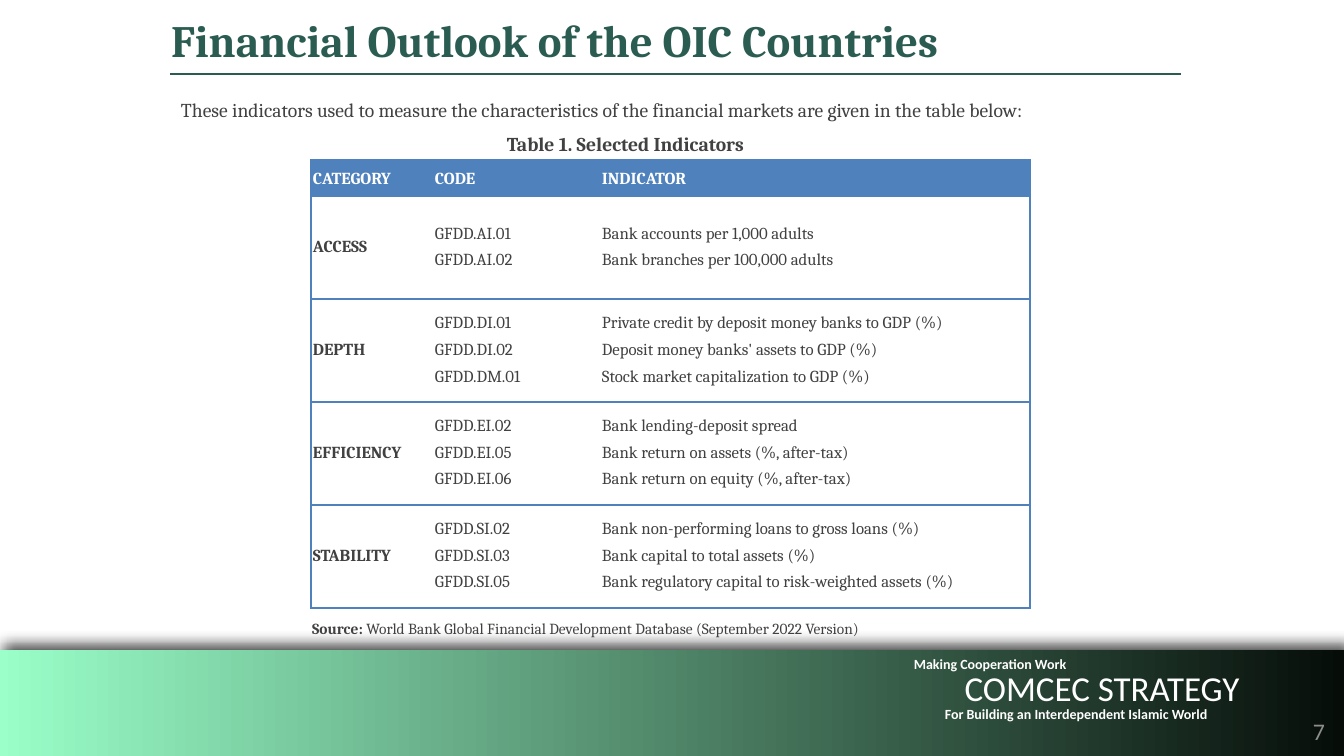
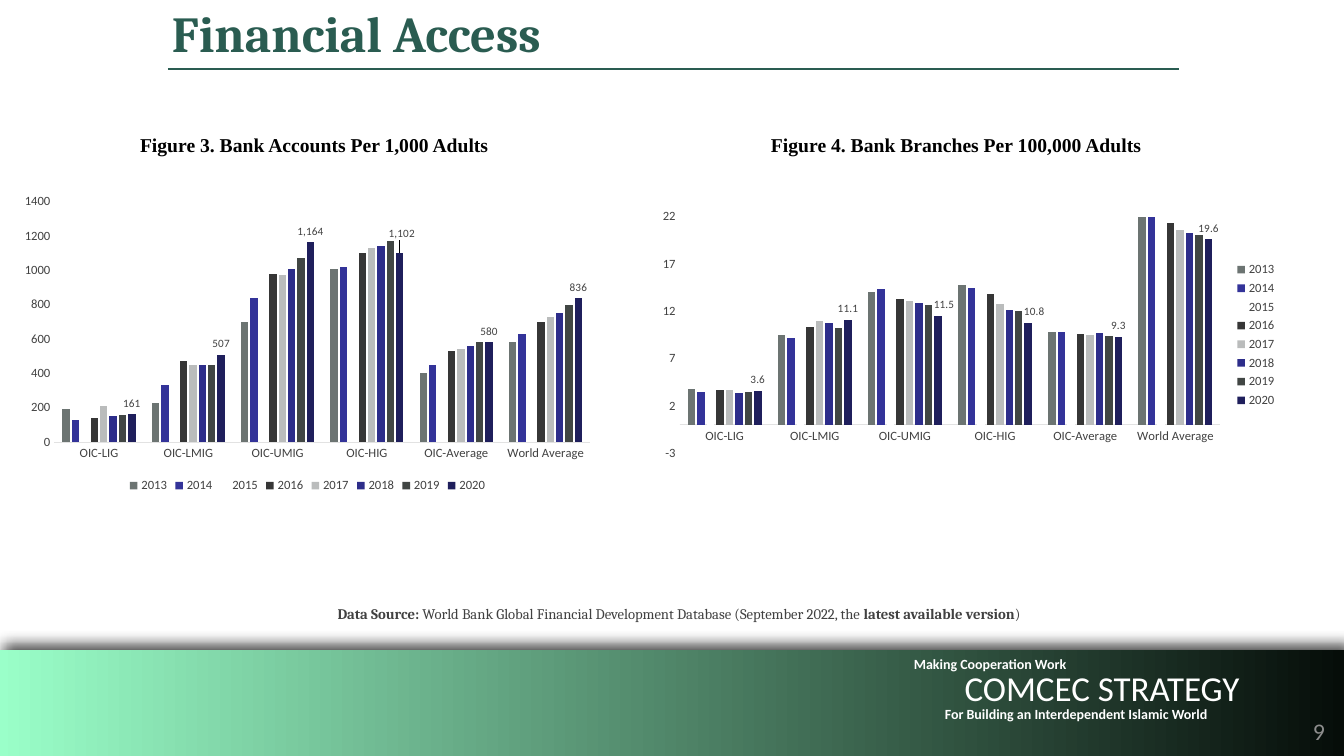
from copy import deepcopy

from lxml import etree
from pptx import Presentation
from pptx.chart.data import CategoryChartData
from pptx.dml.color import RGBColor
from pptx.enum.chart import XL_CHART_TYPE, XL_LABEL_POSITION, XL_LEGEND_POSITION, XL_TICK_MARK
from pptx.enum.shapes import MSO_CONNECTOR, MSO_SHAPE
from pptx.enum.text import MSO_ANCHOR, MSO_AUTO_SIZE, PP_ALIGN
from pptx.oxml import parse_xml
from pptx.oxml.ns import nsdecls, qn
from pptx.util import Emu, Pt

LEFT, CENTER, RIGHT, JUSTIFY = PP_ALIGN.LEFT, PP_ALIGN.CENTER, PP_ALIGN.RIGHT, PP_ALIGN.JUSTIFY
TOP, MIDDLE, BOTTOM = MSO_ANCHOR.TOP, MSO_ANCHOR.MIDDLE, MSO_ANCHOR.BOTTOM
STRAIGHT, RECTANGLE = MSO_CONNECTOR.STRAIGHT, MSO_SHAPE.RECTANGLE
GROW, FIXED = MSO_AUTO_SIZE.SHAPE_TO_FIT_TEXT, MSO_AUTO_SIZE.NONE
COLUMNS, NO_TICK = XL_CHART_TYPE.COLUMN_CLUSTERED, XL_TICK_MARK.NONE
LEGEND_BELOW, LEGEND_RIGHT = XL_LEGEND_POSITION.BOTTOM, XL_LEGEND_POSITION.RIGHT
ABOVE_BAR = XL_LABEL_POSITION.OUTSIDE_END

EMU_PER_PX = 12192000 / 1344
GREEN, INK, BLUE, WHITE, BLACK = "2A5C51", "414141", "4F81BD", "FFFFFF", "000000"
PALE_GREEN, NIGHT_GREEN, NUMBER_GRAY, AXIS_GRAY = "9AFFC9", "060D09", "8D8D8D", "E2E2E2"
SERIF, SANS, FIGURE_FONT = "Cambria", "Calibri", "Times New Roman"
NO_TABLE_STYLE = "{2D5ABB26-0587-4C30-8999-92F81FD0307C}"

BAND = (-3, 650, 1347, 106)
FOOTER = [
    ("For Building an Interdependent Islamic World", (876, 706, 400, 20), 10, True, TOP),
    ("COMCEC STRATEGY", (902, 661, 400, 48), 25, False, BOTTOM),
    ("Making Cooperation Work", (790, 655, 400, 36), 10, True, TOP),
]
NUMBER_BOX = (1126, 713, 206, 42)
RULE_WIDTH = 1011

OUTLOOK = {"title": "Financial Outlook of the OIC Countries", "box": (171, 13, 966, 54),
           "size": 32, "rule": (170, 74), "number": "7"}
ACCESS = {"title": "Financial Access", "box": (172, 2, 957, 61),
          "size": 36, "rule": (168, 69), "number": "9"}

INTRO = ("These indicators used to measure the characteristics of the financial markets "
         "are given in the table below:")
TABLE_CAPTION = "Table 1. Selected Indicators"
HEADER = ["CATEGORY", "CODE", "INDICATOR"]
INDICATORS = [
    ("ACCESS", [("GFDD.AI.01", "Bank accounts per 1,000 adults"),
                ("GFDD.AI.02", "Bank branches per 100,000 adults")]),
    ("DEPTH", [("GFDD.DI.01", "Private credit by deposit money banks to GDP (%)"),
               ("GFDD.DI.02", "Deposit money banks' assets to GDP (%)"),
               ("GFDD.DM.01", "Stock market capitalization to GDP (%)")]),
    ("EFFICIENCY", [("GFDD.EI.02", "Bank lending-deposit spread"),
                    ("GFDD.EI.05", "Bank return on assets (%, after-tax)"),
                    ("GFDD.EI.06", "Bank return on equity (%, after-tax)")]),
    ("STABILITY", [("GFDD.SI.02", "Bank non-performing loans to gross loans (%)"),
                   ("GFDD.SI.03", "Bank capital to total assets (%)"),
                   ("GFDD.SI.05", "Bank regulatory capital to risk-weighted assets (%)")]),
]
TABLE_LEFT, TABLE_TOP = 311, 160
COLUMN_WIDTHS = [122, 167, 430]
HEADER_HEIGHT, ROW_HEIGHT = 36, 103
TABLE_SOURCE = [("Source:", True),
                (" World Bank Global Financial Development Database (September 2022 Version)", False)]
DATA_SOURCE = [("Data Source:", True),
               (" World Bank Global Financial Development Database (September 2022, the ", False),
               ("latest available version", True), (")", False)]

GROUPS = ["OIC-LIG", "OIC-LMIG", "OIC-UMIG", "OIC-HIG", "OIC-Average", "World Average"]
YEAR_COLORS = {"2013": "6C7472", "2014": "333399", "2015": "FFFFFF", "2016": "363636",
               "2017": "BABCBC", "2018": "2D2D8A", "2019": "414644", "2020": "1F1F5C"}
FIGURES = [
    {"caption": "Figure 3. Bank Accounts Per 1,000 Adults", "caption_left": 130,
     "box": (13, 188, 589, 309), "legend": LEGEND_BELOW, "scale": (0, 1400, 200),
     "labels": "#,##0", "label_shifts": {"OIC-HIG": (2, -8)}, "values": [
         [190, 230, 700, 1010, 400, 580],
         [130, 330, 840, 1020, 450, 630],
         [130, 420, 890, 1050, 480, 680],
         [140, 470, 980, 1100, 530, 700],
         [210, 450, 970, 1130, 540, 730],
         [150, 450, 1010, 1140, 560, 750],
         [160, 450, 1070, 1170, 580, 800],
         [161, 507, 1164, 1102, 580, 836]]},
    {"caption": "Figure 4. Bank Branches Per 100,000 Adults", "caption_left": 761,
     "box": (650, 204, 637, 262), "legend": LEGEND_RIGHT, "scale": (-3, 22, 5),
     "labels": "0.0", "label_shifts": {"OIC-UMIG": (6, 0), "OIC-HIG": (6, 0)}, "values": [
         [3.8, 9.5, 14, 14.8, 9.8, 22.4],
         [3.5, 9.2, 14.4, 14.5, 9.8, 22.4],
         [3.7, 9.5, 13.3, 14, 9.5, 21.6],
         [3.7, 10.3, 13.3, 13.8, 9.6, 21.3],
         [3.7, 11, 13.1, 12.8, 9.5, 20.6],
         [3.4, 10.8, 12.9, 12.1, 9.7, 20.3],
         [3.5, 10.2, 12.7, 12, 9.4, 20],
         [3.6, 11.1, 11.5, 10.8, 9.3, 19.6]]},
]


def px(*lengths):
    return [Emu(round(length * EMU_PER_PX)) for length in lengths]


def rgb(code):
    return RGBColor.from_string(code)


def style_font(font, size, color=INK, name=SANS, bold=False):
    font.size, font.name, font.bold = Pt(size), name, bold
    font.color.rgb = rgb(color)


def write(frame, lines, size, color=INK, name=SERIF, bold=False, align=LEFT, spacing=None, after=None):
    for index, line in enumerate(lines):
        paragraph = frame.add_paragraph() if index else frame.paragraphs[0]
        paragraph.alignment = align
        if spacing:
            paragraph.line_spacing = spacing
        if after:
            paragraph.space_after = Pt(after)
        style_font(paragraph.font, size, color, name, bold)
        if isinstance(line, str):
            paragraph.add_run().text = line
            continue
        for text, is_bold in line:
            run = paragraph.add_run()
            run.text = text
            run.font.bold = is_bold


def set_insets(holder, side, end):
    holder.margin_left, holder.margin_right, holder.margin_top, holder.margin_bottom = px(side, side, end, end)


def add_text(slide, box, lines, size, anchor=TOP, insets=(10, 5), grow=True, **style):
    label = slide.shapes.add_textbox(*px(*box))
    frame = label.text_frame
    frame.word_wrap = True
    frame.auto_size = GROW if grow else FIXED
    frame.vertical_anchor = anchor
    set_insets(frame, *insets)
    write(frame, lines, size, **style)
    return label


def move_footer_to_layout(slide):
    layout_shapes = slide.slide_layout.shapes
    for unused in [item for item in layout_shapes if item.placeholder_format.idx]:
        layout_shapes.element.remove(unused.element)
    band = slide.shapes.add_shape(RECTANGLE, *px(*BAND))
    band.fill.gradient()
    band.fill.gradient_angle = 0
    for stop, color in zip(band.fill.gradient_stops, (PALE_GREEN, NIGHT_GREEN)):
        stop.color.rgb = rgb(color)
    band.line.fill.background()
    band.shadow.inherit = False
    band.element.find(".//" + qn("a:effectLst")).append(parse_xml(
        f'<a:outerShdw {nsdecls("a")} blurRad="127000" dist="76200" dir="19080000" rotWithShape="0">'
        f'<a:srgbClr val="{BLACK}"><a:alpha val="75000"/></a:srgbClr></a:outerShdw>'))
    slogans = [add_text(slide, box, [text], size, anchor=anchor, insets=(0, 0), grow=False,
                        color=WHITE, name=SANS, bold=bold, align=CENTER)
               for text, box, size, bold, anchor in FOOTER]
    for part in [band, *slogans]:
        layout_shapes.element.append(part.element)


def add_heading(slide, heading):
    title = slide.shapes.title
    title.left, title.top, title.width, title.height = px(*heading["box"])
    frame = title.text_frame
    frame.word_wrap = True
    frame.auto_size = GROW
    frame.vertical_anchor = TOP
    set_insets(frame, 0, 0)
    write(frame, [heading["title"]], heading["size"], color=GREEN, bold=True)
    left, top = heading["rule"]
    rule = slide.shapes.add_connector(STRAIGHT, *px(left, top, left + RULE_WIDTH, top))
    rule.line.color.rgb = rgb(GREEN)
    rule.line.width = Pt(2)
    etree.SubElement(rule.element.find(qn("p:spPr")), qn("a:effectLst"))
    add_text(slide, NUMBER_BOX, [heading["number"]], 17, insets=(7, 4), grow=False,
             color=NUMBER_GRAY, name=SANS, align=RIGHT)


def add_borders(cell, sides):
    properties = cell._tc.get_or_add_tcPr()
    for side in sides:
        properties.append(parse_xml(
            f'<a:ln{side} {nsdecls("a")} w="12700"><a:solidFill><a:srgbClr val="{BLUE}"/>'
            f'</a:solidFill></a:ln{side}>'))


def add_indicator_table(slide):
    heights = [HEADER_HEIGHT] + [ROW_HEIGHT] * len(INDICATORS)
    holder = slide.shapes.add_table(len(heights), len(HEADER), *px(
        TABLE_LEFT, TABLE_TOP, sum(COLUMN_WIDTHS), sum(heights)))
    holder.element.find(".//" + qn("a:tableStyleId")).text = NO_TABLE_STYLE
    table = holder.table
    table.horz_banding = False
    for column, width in zip(table.columns, px(*COLUMN_WIDTHS)):
        column.width = width
    for row, height in zip(table.rows, px(*heights)):
        row.height = height
    rows = [[[name] for name in HEADER]]
    for category, entries in INDICATORS:
        codes, descriptions = zip(*entries)
        rows.append([[category], codes, descriptions])
    outer_sides = [["L", "T", "B"], ["T", "B"], ["R", "T", "B"]]
    for row_index, row in enumerate(rows):
        for column_index, lines in enumerate(row):
            cell = table.cell(row_index, column_index)
            add_borders(cell, outer_sides[column_index])
            set_insets(cell, 2, 0)
            cell.vertical_anchor = MIDDLE
            if row_index == 0:
                cell.fill.solid()
                cell.fill.fore_color.rgb = rgb(BLUE)
                write(cell.text_frame, lines, 12, color=WHITE, bold=True, spacing=1.15, after=10)
            else:
                cell.fill.background()
                write(cell.text_frame, lines, 12, bold=column_index == 0, align=JUSTIFY,
                      spacing=Pt(13), after=6)


def shift_labels(labels, shifts, chart_width, chart_height):
    shared = [deepcopy(part) for part in labels if part.tag != qn("c:showLeaderLines")]
    for position, (group, (right, down)) in enumerate(shifts.items()):
        label = parse_xml(
            f'<c:dLbl {nsdecls("c")}><c:idx val="{GROUPS.index(group)}"/><c:layout><c:manualLayout>'
            f'<c:x val="{right / chart_width:.4f}"/><c:y val="{down / chart_height:.4f}"/>'
            f'</c:manualLayout></c:layout></c:dLbl>')
        label.extend(deepcopy(shared))
        labels.insert(position, label)


def add_figure(slide, figure):
    add_text(slide, (figure["caption_left"], 128, 453, 34), [figure["caption"]], 14,
             color=BLACK, name=FIGURE_FONT, bold=True)
    data = CategoryChartData()
    data.categories = GROUPS
    for year, values in zip(YEAR_COLORS, figure["values"]):
        data.add_series(year, values)
    chart = slide.shapes.add_chart(COLUMNS, *px(*figure["box"]), data).chart
    style_font(chart.font, 10)
    chart.has_title = False
    chart.has_legend = True
    chart.legend.position = figure["legend"]
    chart.legend.include_in_layout = False
    style_font(chart.legend.font, 9)
    groups, amounts = chart.category_axis, chart.value_axis
    for axis in (groups, amounts):
        axis.major_tick_mark = axis.minor_tick_mark = NO_TICK
        axis.has_major_gridlines = False
        style_font(axis.tick_labels.font, 9)
    groups.format.line.color.rgb = rgb(AXIS_GRAY)
    groups.format.line.width = Pt(0.75)
    amounts.format.line.fill.background()
    amounts.minimum_scale, amounts.maximum_scale, amounts.major_unit = figure["scale"]
    amounts.tick_labels.number_format = "0"
    amounts.tick_labels.number_format_is_linked = False
    plot = chart.plots[0]
    plot.gap_width, plot.overlap, plot.vary_by_categories = 219, -27, False
    for series, color in zip(plot.series, YEAR_COLORS.values()):
        series.format.fill.solid()
        series.format.fill.fore_color.rgb = rgb(color)
        series.invert_if_negative = False
    latest = plot.series[-1].data_labels
    latest.show_value = True
    latest.position = ABOVE_BAR
    latest.number_format = figure["labels"]
    latest.number_format_is_linked = False
    style_font(latest.font, 8)
    shift_labels(latest._element, figure["label_shifts"], *figure["box"][2:])


def main():
    deck = Presentation()
    deck.slide_width, deck.slide_height = px(1344, 756)
    title_only = deck.slide_layouts[5]

    outlook = deck.slides.add_slide(title_only)
    move_footer_to_layout(outlook)
    add_heading(outlook, OUTLOOK)
    add_text(outlook, (171, 93, 980, 34), [INTRO], 14)
    add_text(outlook, (497, 127, 379, 34), [TABLE_CAPTION], 14, bold=True)
    add_indicator_table(outlook)
    add_text(outlook, (302, 614, 879, 29), [TABLE_SOURCE], 11, align=JUSTIFY, spacing=Pt(13), after=6)

    access = deck.slides.add_slide(title_only)
    add_heading(access, ACCESS)
    for figure in FIGURES:
        add_figure(access, figure)
    add_text(access, (232, 600, 894, 28), [DATA_SOURCE], 10.5, align=CENTER)

    deck.save("out.pptx")


if __name__ == "__main__":
    main()
